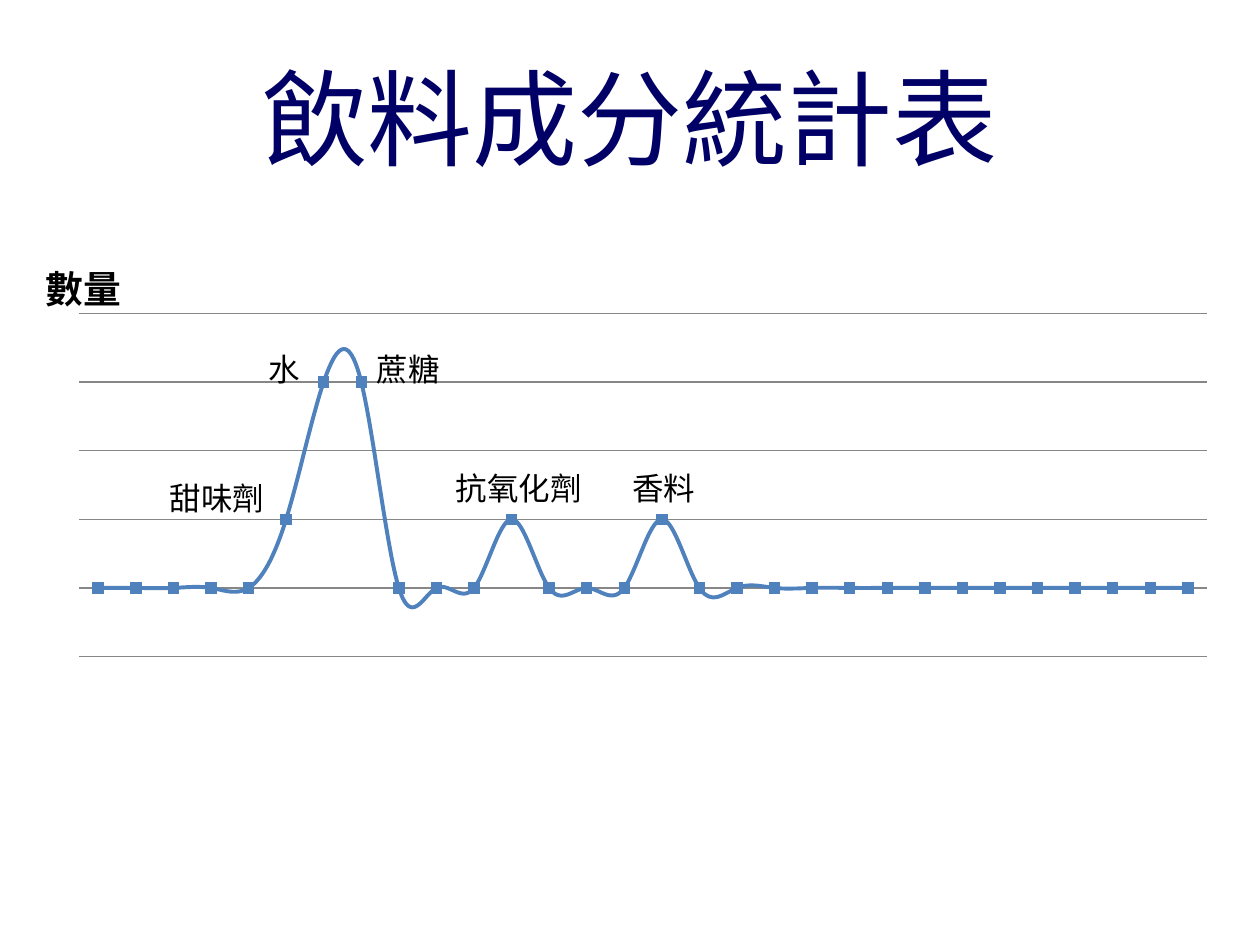
from dataclasses import dataclass

from lxml import etree
from pptx import Presentation
from pptx import util as u
from pptx.chart import data as chart_data
from pptx.dml import color
from pptx.enum import chart as chart_kinds, text
from pptx.oxml import ns

WIDTH, HEIGHT = 10, 7.5
FONT = "Calibri"
COLORS = {"title": "000066", "text": "000000", "line": "4F81BD", "grid": "878787"}
BASELINE = 25
PEAKS = {6: 50, 7: 100, 8: 100, 12: 50, 16: 50}


@dataclass
class Label:
    words: str
    left: float
    top: float
    width: float


LABELS = [
    Label("甜味劑", 0.125, 0.5, 0.102),
    Label("水", 0.203, 0.364, 0.047),
    Label("蔗糖", 0.289, 0.364, 0.078),
    Label("抗氧化劑", 0.352, 0.49, 0.133),
    Label("香料", 0.492, 0.49, 0.078),
]


def rgb(name: str) -> color.RGBColor:
    return color.RGBColor.from_string(COLORS[name])


def frame(left: float, top: float, width: float, height: float) -> tuple:
    return (u.Inches(left * WIDTH), u.Inches(top * HEIGHT),
            u.Inches(width * WIDTH), u.Inches(height * HEIGHT))


def style(font, *, size: float, tint: str = "text", bold: bool = False) -> None:
    font.name, font.size, font.bold = FONT, u.Pt(size), bold
    font.color.rgb = rgb(tint)


def write(box_text, words: str, *, align=text.PP_ALIGN.LEFT, **look) -> None:
    para = box_text.paragraphs[0]
    para.alignment = align
    span = para.add_run()
    span.text = words
    style(span.font, **look)


def set_layout(parent, position: int, **settings) -> None:
    old = parent.find(ns.qn("c:layout"))
    if old is not None:
        parent.remove(old)
    layout = etree.Element(ns.qn("c:layout"))
    manual = etree.SubElement(layout, ns.qn("c:manualLayout"))
    for tag, value in settings.items():
        etree.SubElement(manual, ns.qn(f"c:{tag}")).set("val", str(value))
    parent.insert(position, layout)


def add_title(page, words: str) -> None:
    title = page.shapes.title
    title.left, title.top, title.width, title.height = frame(0.05, 0.04, 0.9, 1 / 6)
    title.text_frame.vertical_anchor = text.MSO_ANCHOR.MIDDLE
    write(title.text_frame, words, align=text.PP_ALIGN.CENTER, size=60, tint="title")


def add_label(page, label: Label) -> None:
    box = page.shapes.add_textbox(*frame(label.left, label.top, label.width, 0.4 / HEIGHT))
    box.text_frame.word_wrap = True
    box.text_frame.auto_size = text.MSO_AUTO_SIZE.SHAPE_TO_FIT_TEXT
    write(box.text_frame, label.words, size=18)


def add_line_chart(page, name: str) -> None:
    numbers = range(1, 31)
    data = chart_data.CategoryChartData()
    data.categories = [str(number) for number in numbers]
    data.add_series(name, [PEAKS.get(number, BASELINE) for number in numbers])
    chart = page.shapes.add_chart(
        chart_kinds.XL_CHART_TYPE.LINE_MARKERS, *frame(0.016, 0.233, 0.961, 0.715), data).chart
    style(chart.font, size=18)
    chart.has_legend = False
    chart.plots[0].vary_by_categories = False

    heading = chart.chart_title
    write(heading.text_frame, name, size=21.6, bold=True)
    set_layout(heading.element, 1, xMode="edge", yMode="edge", x=0.015, y=0.04)
    heading.element.find(ns.qn("c:overlay")).set("val", "1")
    plot_area = chart.element.find(f".//{ns.qn('c:plotArea')}")
    set_layout(plot_area, 0, layoutTarget="inner", xMode="edge", yMode="edge",
               x=0.049, y=0.138, w=0.931, h=0.508)

    chart.category_axis.visible = False
    axis = chart.value_axis
    axis.visible = False
    axis.minimum_scale, axis.maximum_scale, axis.major_unit = 0, 125, 25
    axis.has_major_gridlines = True
    axis.major_gridlines.format.line.color.rgb = rgb("grid")
    axis.major_gridlines.format.line.width = u.Pt(0.75)

    series = chart.plots[0].series[0]
    series.smooth = True
    series.format.line.color.rgb = rgb("line")
    series.format.line.width = u.Pt(2.25)
    marker = series.marker
    marker.style, marker.size = chart_kinds.XL_MARKER_STYLE.SQUARE, 6
    marker.format.fill.solid()
    marker.format.fill.fore_color.rgb = rgb("line")
    marker.format.line.color.rgb = rgb("line")


def main() -> None:
    deck = Presentation()
    deck.slide_width, deck.slide_height = u.Inches(WIDTH), u.Inches(HEIGHT)
    page = deck.slides.add_slide(deck.slide_layouts[5])
    add_title(page, "飲料成分統計表")
    add_line_chart(page, "數量")
    for label in LABELS:
        add_label(page, label)
    deck.save("out.pptx")


if __name__ == "__main__":
    main()
